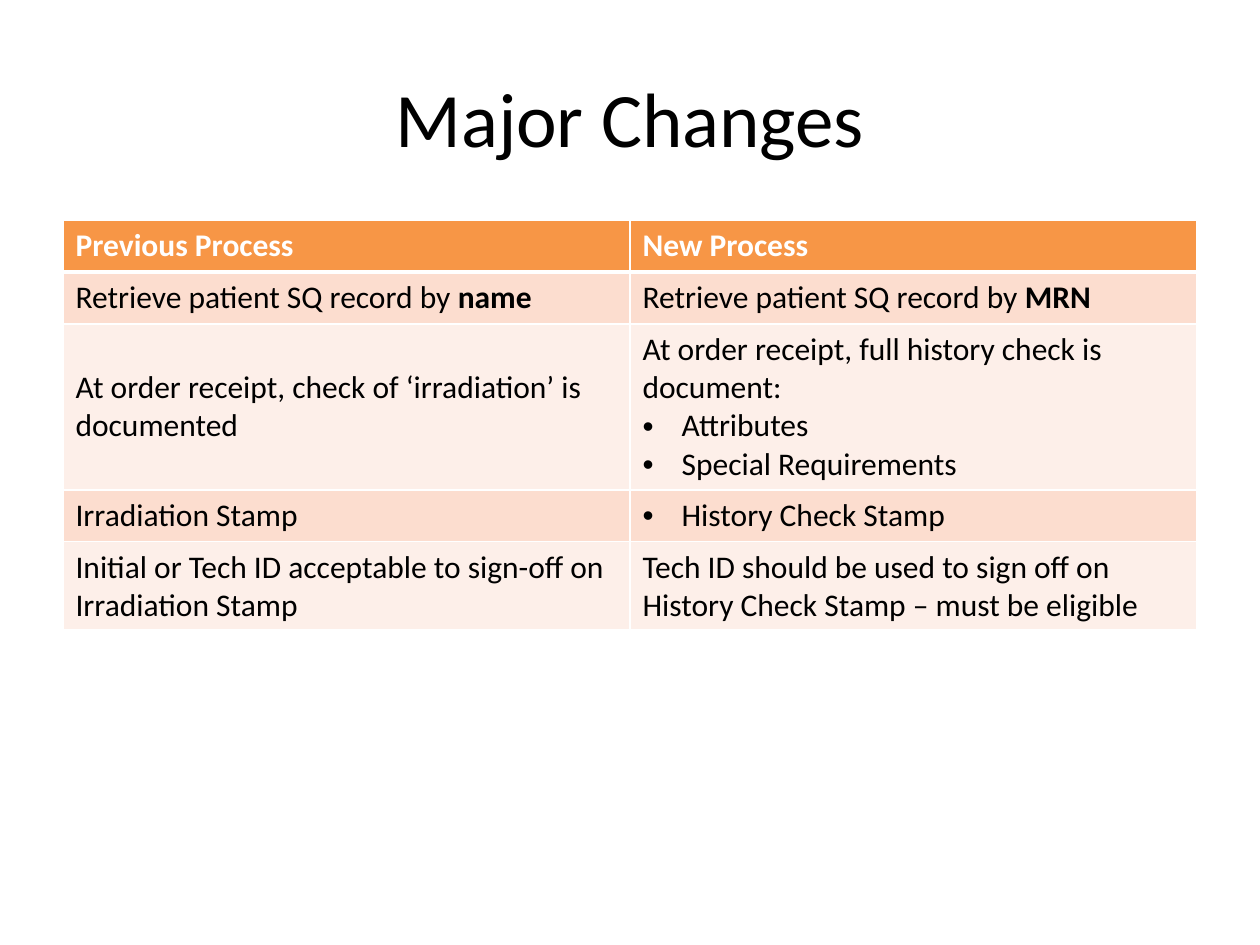
from dataclasses import dataclass

from lxml import etree
from pptx import Presentation
from pptx import util as u
from pptx.dml.color import RGBColor
from pptx.enum import text
from pptx.oxml.ns import qn

Inches, Pt = u.Inches, u.Pt


@dataclass(frozen=True)
class Theme:
    font: str = "Calibri"
    title_size: int = 44
    body_size: int = 18
    ink: str = "000000"
    white: str = "FFFFFF"
    header: str = "F79646"
    bands: tuple = ("FCDDCF", "FDEFE9")


THEME = Theme()
BULLET = "• "  # marks a bulleted paragraph in the content below

# Each cell is a list of paragraphs; each paragraph is a list of (text, bold) runs
HEADERS = ["Previous Process", "New Process"]
CHANGES = [
    ([[("Retrieve patient SQ record by ", False), ("name", True)]],
     [[("Retrieve patient SQ record by ", False), ("MRN", True)]]),
    ([[("At order receipt, check of ‘irradiation’ is documented", False)]],
     [[("At order receipt, full history check is document:", False)],
      [(BULLET + "Attributes", False)],
      [(BULLET + "Special Requirements", False)]]),
    ([[("Irradiation Stamp", False)]],
     [[(BULLET + "History Check Stamp", False)]]),
    ([[("Initial or Tech ID acceptable to sign-off on Irradiation Stamp", False)]],
     [[("Tech ID should be used to sign off on History Check Stamp – must be eligible", False)]]),
]
ROW_HEIGHTS = [0.41, 0.41, 1.32, 0.41, 0.7]


def add_run(paragraph, words, size, color, bold=False):
    run = paragraph.add_run()
    run.text = words
    run.font.name = THEME.font
    run.font.size = Pt(size)
    run.font.bold = bold
    run.font.color.rgb = RGBColor.from_string(color)


def add_bullet(paragraph):
    props = paragraph._p.get_or_add_pPr()
    indent = Inches(0.31)
    props.set("marL", str(indent))
    props.set("indent", str(-indent))
    etree.SubElement(props, qn("a:buFont"), typeface="Arial")
    etree.SubElement(props, qn("a:buChar"), char=BULLET.strip())


def set_borders(cell, bottom):
    props = cell._tc.get_or_add_tcPr()
    for side, width in (("L", 1), ("R", 1), ("T", 1), ("B", bottom)):
        line = etree.SubElement(props, qn(f"a:ln{side}"), w=str(Pt(width)))
        fill = etree.SubElement(line, qn("a:solidFill"))
        etree.SubElement(fill, qn("a:srgbClr"), val=THEME.white)


def fill_cell(cell, paragraphs, fill, color, bottom=1):
    set_borders(cell, bottom)
    cell.fill.solid()
    cell.fill.fore_color.rgb = RGBColor.from_string(fill)
    frame = cell.text_frame
    for index, runs in enumerate(paragraphs):
        paragraph = frame.add_paragraph() if index else frame.paragraphs[0]
        if runs[0][0].startswith(BULLET):
            add_bullet(paragraph)
        for words, bold in runs:
            add_run(paragraph, words.removeprefix(BULLET), THEME.body_size, color, bold)


def add_title(slide, box, words):
    frame = slide.shapes.add_textbox(*box).text_frame
    frame.word_wrap = True
    frame.vertical_anchor = text.MSO_ANCHOR.MIDDLE
    heading = frame.paragraphs[0]
    heading.alignment = text.PP_ALIGN.CENTER
    add_run(heading, words, THEME.title_size, THEME.ink)


def add_changes_table(slide, box):
    table = slide.shapes.add_table(len(ROW_HEIGHTS), len(HEADERS), *box).table
    for row, height in zip(table.rows, ROW_HEIGHTS):
        row.height = Inches(height)

    # Header row, with a heavier rule below it
    for column, header in enumerate(HEADERS):
        fill_cell(table.cell(0, column), [[(header, True)]], THEME.header, THEME.white, bottom=3)

    # Banded body rows
    for row, change in enumerate(CHANGES, start=1):
        band = THEME.bands[(row - 1) % 2]
        for column, paragraphs in enumerate(change):
            fill_cell(table.cell(row, column), paragraphs, band, THEME.ink)

    # The short check beside the three-item list sits mid-row
    table.cell(2, 0).vertical_anchor = text.MSO_ANCHOR.MIDDLE


def main():
    deck = Presentation()
    deck.slide_width, deck.slide_height = Inches(10), Inches(7.5)
    slide = deck.slides.add_slide(deck.slide_layouts[6])
    left, width = Inches(0.5), Inches(9)
    add_title(slide, (left, Inches(0.3), width, Inches(1.25)), "Major Changes")
    add_changes_table(slide, (left, Inches(1.75), width, Inches(sum(ROW_HEIGHTS))))
    deck.save("out.pptx")


if __name__ == "__main__":
    main()
